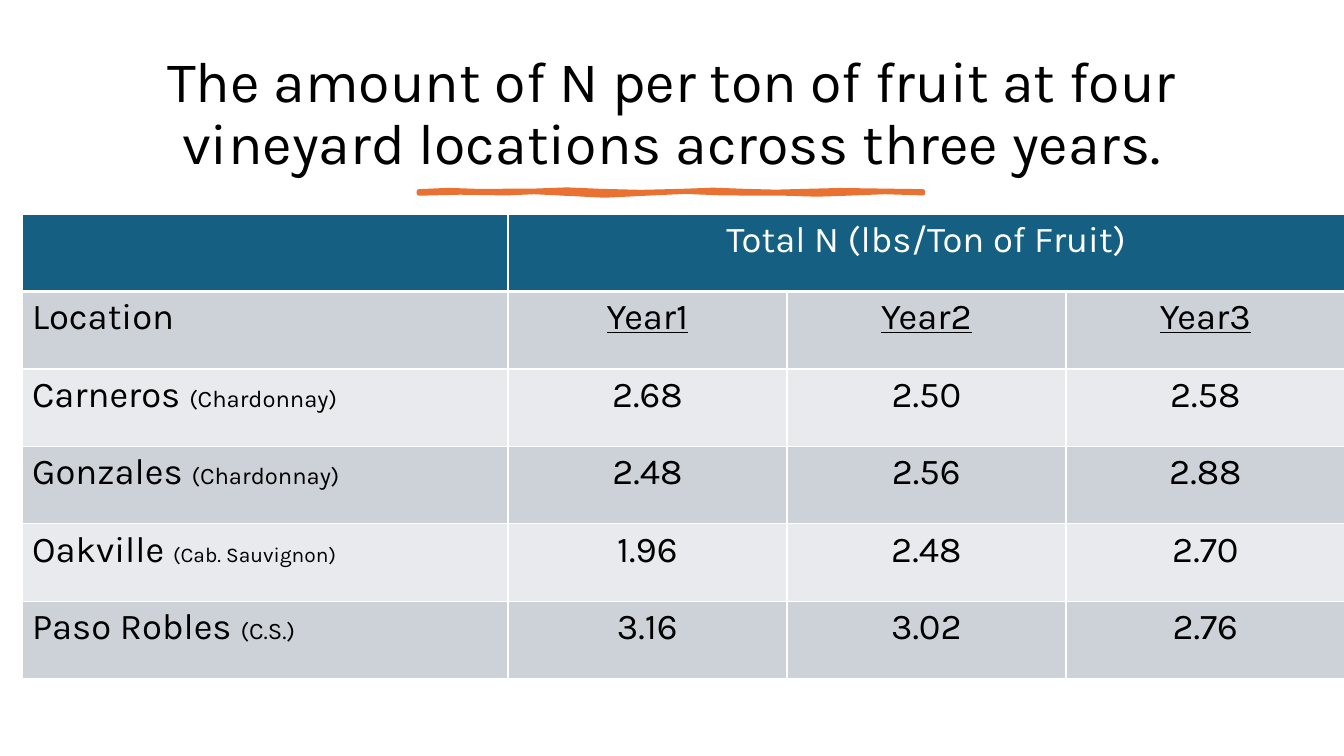
from lxml.etree import SubElement as Sub
from pptx import Presentation
from pptx.dml.color import RGBColor as RGB
from pptx.enum.text import MSO_ANCHOR as ANCHOR, PP_ALIGN as ALIGN
from pptx.oxml.ns import qn
from pptx.util import Pt

TITLE = "The amount of N per ton of fruit at four vineyard locations across three years."
HEADING = "Total N (lbs/Ton of Fruit)"
YEARS = ["Year1", "Year2", "Year3"]
SITES = [
    ("Carneros ", "(Chardonnay)", 17, ["2.68", "2.50", "2.58"]),
    ("Gonzales ", "(Chardonnay)", 17, ["2.48", "2.56", "2.88"]),
    ("Oakville ", "(Cab. Sauvignon)", 15, ["1.96", "2.48", "2.70"]),
    ("Paso Robles ", "(C.S.)", 17, ["3.16", "3.02", "2.76"]),
]
COLS = [486, 279, 279, 279]
TITLE_BOX = (71, 46, 1203, 138)
TABLE_BOX = (22, 214, sum(COLS), 465)
BLUE, BANDS, ORANGE = "156082", ("CCD2D8", "E8EAED"), "E97132"
STROKE_TENTHS = [
    (4190, 1915), (4480, 1902), (4770, 1912), (5330, 1910), (5670, 1897), (6010, 1912),
    (6410, 1922), (6820, 1912), (7130, 1900), (7450, 1912), (7760, 1920), (8060, 1912),
    (8400, 1903), (9230, 1915), (9230, 1932), (8850, 1920), (8470, 1935), (8170, 1945),
    (7850, 1935), (7230, 1932), (6850, 1917), (6460, 1935), (6050, 1955), (5640, 1935),
    (5340, 1920), (5070, 1932), (4600, 1925), (4190, 1935),
]
PX = 914400 / 100.8


def px(*values):
    return [round(v * PX) for v in values]


def rgb(value):
    return RGB.from_string(value)


def write(p, text, size, color="000000", **extra):
    r = p.add_run()
    r.text = text
    r.font.color.rgb = rgb(color)
    fmt = {"name": "Karla", "size": Pt(size), "bold": False, **extra}
    for name, value in fmt.items():
        setattr(r.font, name, value)


def style_cell(cell, color, top, bottom):
    tcpr = cell._tc.get_or_add_tcPr()
    for side, width in (("L", 1), ("R", 1), ("T", top), ("B", bottom)):
        ln = Sub(tcpr, qn(f"a:ln{side}"), w=str(Pt(width)))
        Sub(Sub(ln, qn("a:solidFill")), qn("a:srgbClr"), val="FFFFFF")
    cell.fill.solid()
    cell.fill.fore_color.rgb = rgb(color)


def add_title(s):
    tf = s.shapes.add_textbox(*px(*TITLE_BOX)).text_frame
    tf.word_wrap = True
    tf.vertical_anchor = ANCHOR.MIDDLE
    p = tf.paragraphs[0]
    fmt = {"alignment": ALIGN.CENTER, "line_spacing": 0.9, "space_after": Pt(6)}
    for name, value in fmt.items():
        setattr(p, name, value)
    write(p, TITLE, 41)


def add_stroke(s):
    start, *rest = STROKE_TENTHS
    builder = s.shapes.build_freeform(*start, scale=PX / 10)
    builder.add_line_segments(rest, close=True)
    sp = builder.convert_to_shape()
    sp.shadow.inherit = False
    sp.fill.solid()
    sp.fill.fore_color.rgb = rgb(ORANGE)
    sp.line.color.rgb = rgb(ORANGE)
    sp.line.width = Pt(3.25)


def add_data(s):
    rows = len(SITES) + 2
    table = s.shapes.add_table(rows, len(COLS), *px(*TABLE_BOX)).table
    for col, width in zip(table.columns, px(*COLS)):
        col.width = width
    for i in range(rows):
        color = BANDS[(i - 1) % 2] if i else BLUE
        for j in range(len(COLS)):
            style_cell(table.cell(i, j), color, 3 if i == 1 else 1, 1 if i else 3)
    table.cell(0, 1).merge(table.cell(0, len(COLS) - 1))

    def put(i, j, text, **fmt):
        p = table.cell(i, j).text_frame.paragraphs[0]
        p.alignment = ALIGN.CENTER if j else ALIGN.LEFT
        write(p, text, 26, **fmt)
        return p

    put(0, 1, HEADING, color="FFFFFF")
    put(1, 0, "Location")
    for j, year in enumerate(YEARS, 1):
        put(1, j, year, underline=True)
    for i, (place, grape, size, values) in enumerate(SITES, 2):
        write(put(i, 0, place), grape, size)
        for j, value in enumerate(values, 1):
            put(i, j, value)


def main():
    prs = Presentation()
    prs.slide_width, prs.slide_height = px(1344, 756)
    s = prs.slides.add_slide(prs.slide_layouts[6])
    add_title(s)
    add_stroke(s)
    add_data(s)
    prs.save("out.pptx")


if __name__ == "__main__":
    main()
